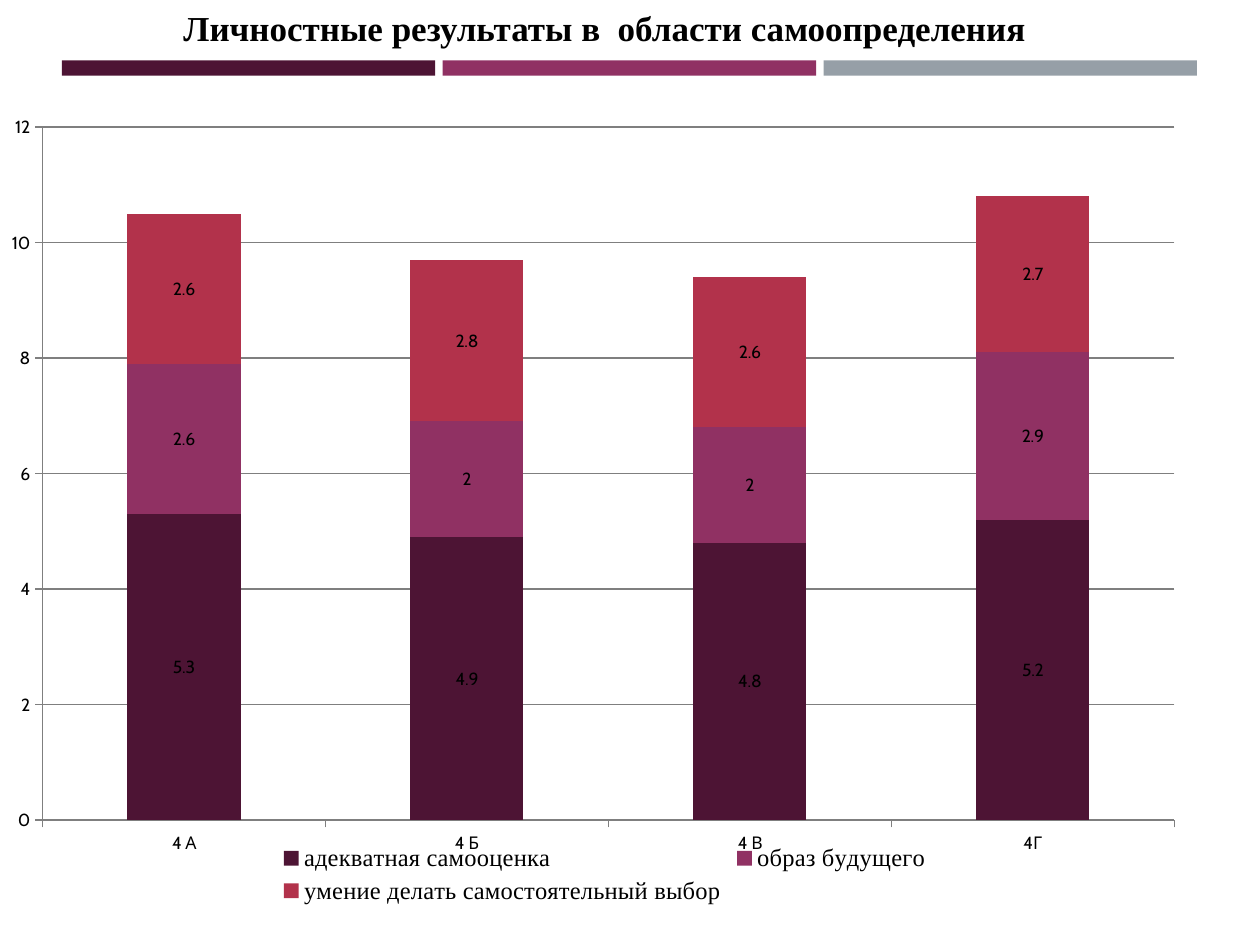
from lxml import etree
from pptx import Presentation
from pptx import util as u
from pptx.chart.data import CategoryChartData
from pptx.dml.color import RGBColor
from pptx.enum import chart as ch
from pptx.enum import shapes, text
from pptx.oxml.ns import qn

WIDTH, HEIGHT = 10, 7.5
COLORS = {"plum": "4D1434", "magenta": "903163", "gray": "969FA7",
          "red": "B2324B", "black": "000000", "axis": "7F7F7F"}
CLASSES = ["4 А", "4 Б", "4 В", "4Г"]
RESULTS = [
    ("адекватная самооценка", (5.3, 4.9, 4.8, 5.2), "plum"),
    ("образ будущего", (2.6, 2, 2, 2.9), "magenta"),
    ("умение делать самостоятельный выбор", (2.6, 2.8, 2.6, 2.7), "red"),
]
PLOT_SHARES = {"x": 0.039, "y": 0.014, "w": 0.928, "h": 0.873}


def color(name):
    return RGBColor.from_string(COLORS[name])


def inches(*lengths):
    return [u.Inches(length) for length in lengths]


def set_font(font, name, size, bold=False):
    font.name, font.size, font.bold = name, u.Pt(size), bold
    font.color.rgb = color("black")


def add_text(page, words, area, *, font, size, bold=False):
    box = page.shapes.add_textbox(*inches(*area))
    frame = box.text_frame
    frame.word_wrap = False
    frame.auto_size = text.MSO_AUTO_SIZE.SHAPE_TO_FIT_TEXT
    frame.vertical_anchor = text.MSO_ANCHOR.MIDDLE
    para = frame.paragraphs[0]
    para.alignment = text.PP_ALIGN.CENTER
    span = para.add_run()
    span.text = words
    set_font(span.font, font, size, bold)


def add_band(page, names, left=0.49, right=9.5, top=0.48, height=0.12, gap=0.06):
    """Equal bars side by side between two margins."""
    width = (right - left - gap * (len(names) - 1)) / len(names)
    for column, name in enumerate(names):
        bar = page.shapes.add_shape(
            shapes.MSO_SHAPE.RECTANGLE,
            *inches(left + column * (width + gap), top, width, height))
        bar.shadow.inherit = False
        bar.fill.solid()
        bar.fill.fore_color.rgb = color(name)
        bar.line.fill.background()


def style_line(line):
    line.color.rgb = color("axis")
    line.width = u.Pt(0.75)


def style_axis(axis):
    axis.major_tick_mark = ch.XL_TICK_MARK.OUTSIDE
    axis.minor_tick_mark = ch.XL_TICK_MARK.NONE
    style_line(axis.format.line)


def place_plot(chart, shares):
    """Fix the inner plot area as shares of the chart."""
    area = chart.plots[0]._element.getparent()
    for old in area.findall(qn("c:layout")):
        area.remove(old)
    layout = etree.Element(qn("c:layout"))
    area.insert(0, layout)
    manual = etree.SubElement(layout, qn("c:manualLayout"))
    settings = {"layoutTarget": "inner", "xMode": "edge", "yMode": "edge", **shares}
    for tag, value in settings.items():
        etree.SubElement(manual, qn(f"c:{tag}")).set("val", str(value))


def add_stacked_chart(page, area):
    data = CategoryChartData()
    data.categories = CLASSES
    for name, values, _ in RESULTS:
        data.add_series(name, values)
    chart = page.shapes.add_chart(
        ch.XL_CHART_TYPE.COLUMN_STACKED, *inches(*area), data).chart
    chart.has_title = False
    set_font(chart.font, "Cabin", 10)

    # Columns with their values
    plot = chart.plots[0]
    plot.gap_width, plot.overlap = 150, 100
    plot.vary_by_categories = False
    for series, (_, _, name) in zip(plot.series, RESULTS):
        series.format.fill.solid()
        series.format.fill.fore_color.rgb = color(name)
        series.data_labels.show_value = True

    # Axes and gridlines
    for axis in (chart.category_axis, chart.value_axis):
        style_axis(axis)
    scale = chart.value_axis
    scale.minimum_scale, scale.maximum_scale, scale.major_unit = 0, 12, 2
    scale.has_major_gridlines = True
    style_line(scale.major_gridlines.format.line)

    # Legend
    chart.has_legend = True
    chart.legend.position = ch.XL_LEGEND_POSITION.BOTTOM
    chart.legend.include_in_layout = False
    set_font(chart.legend.font, "Times New Roman", 14)
    place_plot(chart, PLOT_SHARES)


def main():
    deck = Presentation()
    deck.slide_width, deck.slide_height = inches(WIDTH, HEIGHT)
    page = deck.slides.add_slide(deck.slide_layouts[6])
    add_band(page, ["plum", "magenta", "gray"])
    add_text(page, "Личностные результаты в  области самоопределения",
             (1.33, 0, 6.94, 0.44), font="Times New Roman", size=20, bold=True)
    add_stacked_chart(page, (-0.04, 0.92, 9.68, 6.3))
    deck.save("out.pptx")


if __name__ == "__main__":
    main()
